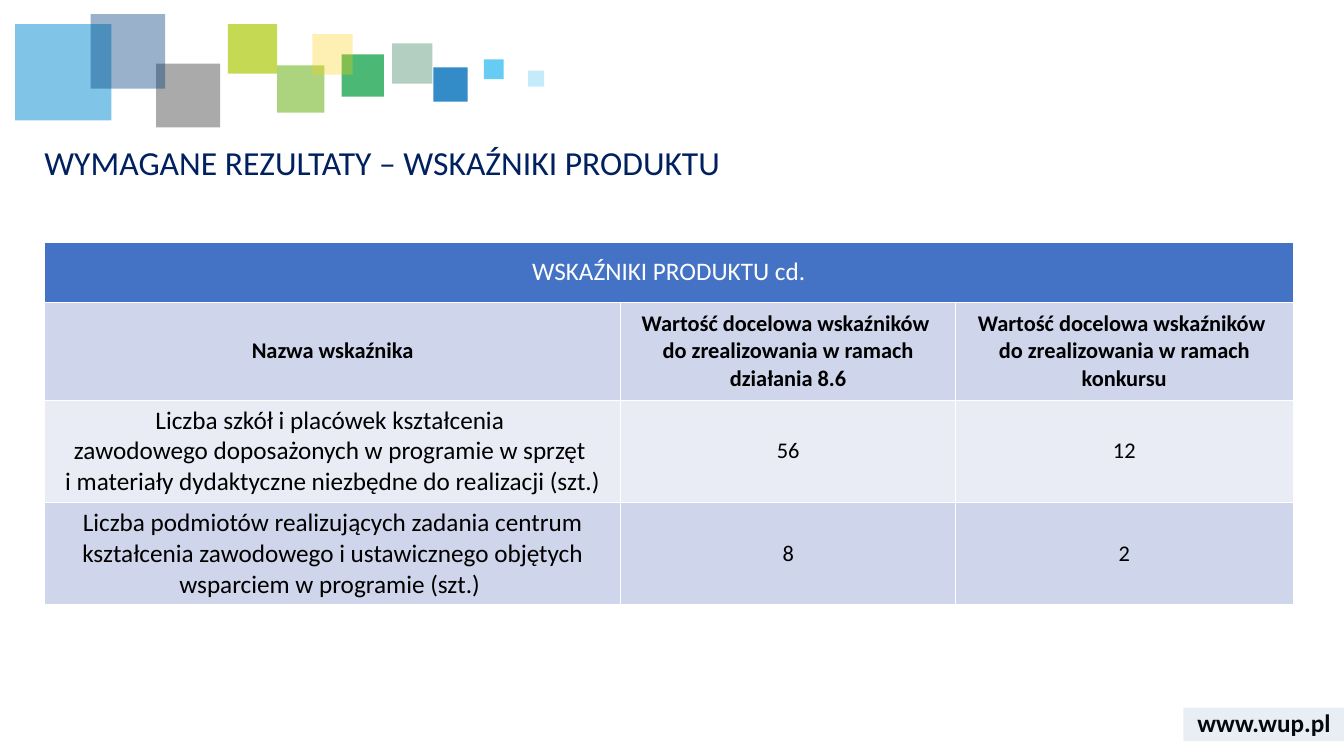
"""Build the slide on product indicators: coloured squares, title, table and web address."""
from lxml import etree
from pptx import Presentation
from pptx.dml.color import RGBColor
from pptx.enum.shapes import MSO_SHAPE
from pptx.enum.text import MSO_ANCHOR, PP_ALIGN
from pptx.oxml.ns import qn
from pptx.util import Pt

RECTANGLE = MSO_SHAPE.RECTANGLE
MIDDLE = MSO_ANCHOR.MIDDLE
CENTER, LEFT = PP_ALIGN.CENTER, PP_ALIGN.LEFT
COLORS = {
    "forest": "006138", "blue": "006EB9", "green": "009A3C", "azure": "028BD3",
    "leaf": "75B82A", "gray": "575757", "navy": "003D7C", "sky": "40C0F1",
    "lime": "AFCA0B", "yellow": "FED000", "bar": "2F5597", "title": "002060",
    "header": "4472C4", "dark band": "CFD5EA", "light band": "E9EBF5",
    "white": "FFFFFF", "black": "000000",
}


def add_tint(left, top, width, height, color, opacity):
    tint = slide.shapes.add_shape(RECTANGLE, Pt(left), Pt(top), Pt(width), Pt(height))
    tint.shadow.inherit = False
    tint.line.fill.background()
    tint.fill.solid()
    tint.fill.fore_color.rgb = RGBColor.from_string(COLORS[color])
    srgb = tint.fill._xPr.find(qn("a:solidFill"))[0]
    etree.SubElement(srgb, qn("a:alpha"), val=str(opacity * 1000))


def format_text(frame, size, color, bold=False, align=CENTER):
    frame.word_wrap = True
    frame.vertical_anchor = MIDDLE
    for paragraph in frame.paragraphs:
        paragraph.alignment = align
        for run in paragraph.runs:
            for key, value in {"name": "Calibri", "size": Pt(size), "bold": bold}.items():
                setattr(run.font, key, value)
            run.font.color.rgb = RGBColor.from_string(COLORS[color])


prs = Presentation()
prs.slide_width, prs.slide_height = Pt(960), Pt(540)
slide = prs.slides.add_slide(prs.slide_layouts[5])

address = slide.shapes.add_textbox(Pt(845.3), Pt(501.8), Pt(115.2), Pt(28.8))
address.text_frame.text = "www.wup.pl"
format_text(address.text_frame, 18, "black", bold=True)

squares = [
    (280.1, 31, 28.8, "forest", 30),
    (309.6, 48.2, 24.5, "blue", 80),
    (244.1, 38.9, 30.2, "green", 70),
    (10.8, 17.3, 68.8, "azure", 50),
    (198, 46.8, 33.8, "leaf", 60),
    (111.6, 45.4, 45.7, "gray", 50),
    (64.8, 10.1, 53.3, "navy", 40),
    (345.6, 42.5, 14.1, "sky", 80),
    (162.7, 17.3, 35.3, "lime", 70),
    (223.2, 24.5, 28.8, "yellow", 30),
    (377.3, 50.4, 11.5, "sky", 30),
]
for left, top, side, color, opacity in squares:
    add_tint(left, top, side, side, color, opacity)
add_tint(845.3, 505.4, 115.2, 23.8, "bar", 10)

title = slide.shapes.title
title.left, title.top, title.width, title.height = Pt(24.5), Pt(97.9), Pt(893.5), Pt(39.6)
title.text_frame.text = "WYMAGANE REZULTATY – WSKAŹNIKI PRODUKTU"
title.text_frame.paragraphs[0].line_spacing = 0.9
format_text(title.text_frame, 24, "title", align=LEFT)

indicators = [
    ["WSKAŹNIKI PRODUKTU cd.", "", ""],
    ["Nazwa wskaźnika",
     "Wartość docelowa wskaźników \vdo zrealizowania w ramach działania 8.6",
     "Wartość docelowa wskaźników \vdo zrealizowania w ramach konkursu"],
    ["Liczba szkół i placówek kształcenia \nzawodowego doposażonych w programie w sprzęt "
     "\vi materiały dydaktyczne niezbędne do realizacji (szt.)", "56", "12"],
    ["Liczba podmiotów realizujących zadania centrum kształcenia zawodowego "
     "i ustawicznego objętych wsparciem w programie (szt.) ", "8", "2"],
]
column_widths = [411.8, 239, 241.2]
row_heights = [43.2, 69.8, 73.2, 73.2]
row_fills = ["header", "dark band", "light band", "dark band"]
table = slide.shapes.add_table(
    4, 3, Pt(31.7), Pt(172.8), Pt(sum(column_widths)), Pt(sum(row_heights))).table
for column, width in zip(table.columns, column_widths):
    column.width = Pt(width)
for row, height in zip(table.rows, row_heights):
    row.height = Pt(height)
table.cell(0, 0).merge(table.cell(0, 2))

for r, texts in enumerate(indicators):
    for c, text in enumerate(texts):
        cell = table.cell(r, c)
        cell.text_frame.text = text
        size = 18 if c == 0 and r != 1 else 16
        format_text(cell.text_frame, size, "black" if r else "white", bold=r == 1)
        cell.vertical_anchor = MIDDLE
        properties = cell._tc.get_or_add_tcPr()
        for edge in ("a:lnL", "a:lnR", "a:lnT", "a:lnB"):
            border = etree.SubElement(properties, qn(edge), w=str(Pt(1)))
            border_fill = etree.SubElement(border, qn("a:solidFill"))
            etree.SubElement(border_fill, qn("a:srgbClr"), val=COLORS["white"])
        cell.fill.solid()
        cell.fill.fore_color.rgb = RGBColor.from_string(COLORS[row_fills[r]])

prs.save("out.pptx")
